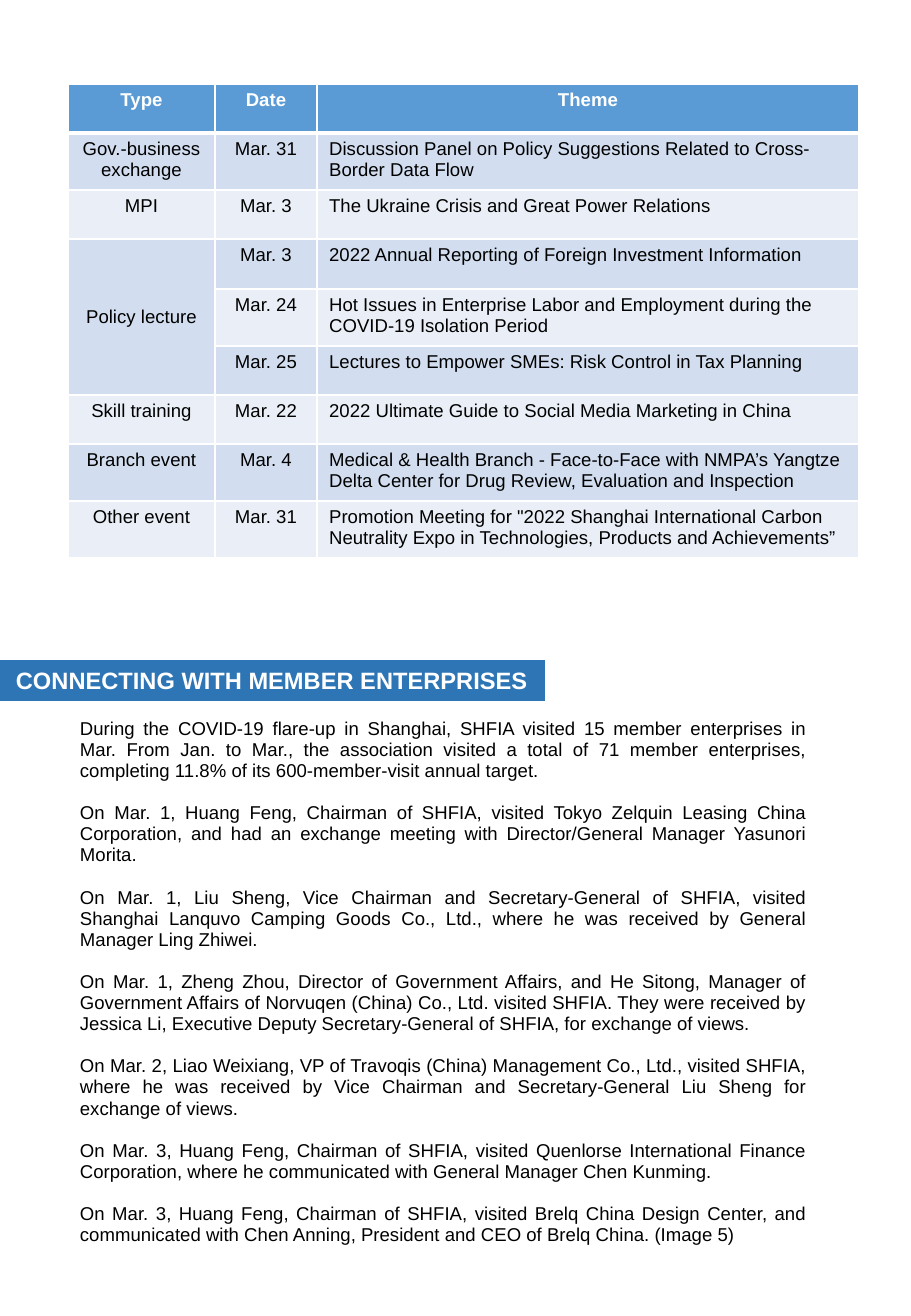
"""Build the page with the monthly event table and the member visit report."""
import pptx
import pptx.dml.color
import pptx.enum.shapes
import pptx.enum.text
import pptx.oxml
import pptx.oxml.ns
import pptx.util

PIXEL = 914400 / 121.5
ALIGN = pptx.enum.text.PP_ALIGN
ANCHOR = pptx.enum.text.MSO_ANCHOR


class Theme:
    white = "FFFFFF"
    black = "000000"
    header = "5B9BD5"
    bands = ("EAEFF7", "D2DEEF")
    banner = "2E75B6"
    body_font = {"name": "Arial", "size": pptx.util.Pt(11), "bold": False}
    header_font = {"name": "Arial", "size": pptx.util.Pt(11), "bold": True}
    banner_font = {"name": "Arial", "size": pptx.util.Pt(14), "bold": True}
    report_paragraph = {
        "alignment": ALIGN.JUSTIFY,
        "line_spacing": pptx.util.Pt(12.5),
        "space_after": pptx.util.Pt(12.5),
    }
    thin_border = 1
    thick_border = 3


COLUMN_WIDTHS = (147, 102, 542)
ROW_HEIGHTS = (49, 57, 49, 50, 57, 49, 49, 57, 57)
COLUMN_ALIGNMENTS = (ALIGN.CENTER, ALIGN.CENTER, ALIGN.LEFT)
POLICY_ROWS = (3, 5)
EVENTS = (
    ("Type", "Date", "Theme"),
    ("Gov.-business exchange", "Mar. 31",
     "Discussion Panel on Policy Suggestions Related to Cross-Border Data Flow"),
    ("MPI", "Mar. 3", "The Ukraine Crisis and Great Power Relations"),
    ("Policy lecture", "Mar. 3", "2022 Annual Reporting of Foreign Investment Information"),
    ("", "Mar. 24",
     "Hot Issues in Enterprise Labor and Employment during the COVID-19 Isolation Period"),
    ("", "Mar. 25", "Lectures to Empower SMEs: Risk Control in Tax Planning"),
    ("Skill training", "Mar. 22", "2022 Ultimate Guide to Social Media Marketing in China"),
    ("Branch event", "Mar. 4",
     "Medical & Health Branch - Face-to-Face with NMPA’s Yangtze Delta Center "
     "for Drug Review, Evaluation and Inspection"),
    ("Other event", "Mar. 31",
     'Promotion Meeting for "2022 Shanghai International Carbon Neutrality Expo '
     "in Technologies, Products and Achievements”"),
)
VISITS = (
    "During the COVID-19 flare-up in Shanghai, SHFIA visited 15 member enterprises in Mar. "
    "From Jan. to Mar., the association visited a total of 71 member enterprises, "
    "completing 11.8% of its 600-member-visit annual target.",
    "On Mar. 1, Huang Feng, Chairman of SHFIA, visited Tokyo Zelquin Leasing China "
    "Corporation, and had an exchange meeting with Director/General Manager Yasunori Morita.",
    "On Mar. 1, Liu Sheng, Vice Chairman and Secretary-General of SHFIA, visited Shanghai "
    "Lanquvo Camping Goods Co., Ltd., where he was received by General Manager Ling Zhiwei.",
    "On Mar. 1, Zheng Zhou, Director of Government Affairs, and He Sitong, Manager of "
    "Government Affairs of Norvuqen (China) Co., Ltd. visited SHFIA. They were received by "
    "Jessica Li, Executive Deputy Secretary-General of SHFIA, for exchange of views.",
    "On Mar. 2, Liao Weixiang, VP of Travoqis (China) Management Co., Ltd., visited SHFIA, "
    "where he was received by Vice Chairman and Secretary-General Liu Sheng for exchange "
    "of views.",
    "On Mar. 3, Huang Feng, Chairman of SHFIA, visited Quenlorse International Finance "
    "Corporation, where he communicated with General Manager Chen Kunming.",
    "On Mar. 3, Huang Feng, Chairman of SHFIA, visited Brelq China Design Center, and "
    "communicated with Chen Anning, President and CEO of Brelq China. (Image 5)",
)


def px(*lengths):
    return [pptx.util.Emu(round(length * PIXEL)) for length in lengths]


def color(value):
    return pptx.dml.color.RGBColor.from_string(value)


def set_values(target, values):
    for name, value in values.items():
        setattr(target, name, value)


def write_text(paragraph, text, font, font_color):
    run = paragraph.add_run()
    run.text = text
    set_values(run.font, font)
    run.font.color.rgb = color(font_color)


def set_borders(cell, top, bottom):
    widths = {"L": Theme.thin_border, "R": Theme.thin_border, "T": top, "B": bottom}
    properties = cell._tc.get_or_add_tcPr()
    for side, width in widths.items():
        properties.append(pptx.oxml.parse_xml(
            f'<a:ln{side} {pptx.oxml.ns.nsdecls("a")} w="{pptx.util.Pt(width)}">'
            f'<a:solidFill><a:srgbClr val="{Theme.white}"/></a:solidFill></a:ln{side}>'))


def fill_cell(cell, text, row, alignment):
    is_header = row == 0
    set_borders(
        cell,
        Theme.thick_border if row == 1 else Theme.thin_border,
        Theme.thick_border if is_header else Theme.thin_border)
    cell.fill.solid()
    cell.fill.fore_color.rgb = color(Theme.header if is_header else Theme.bands[row % 2])
    if text:
        paragraph = cell.text_frame.paragraphs[0]
        paragraph.alignment = ALIGN.CENTER if is_header else alignment
        font = Theme.header_font if is_header else Theme.body_font
        write_text(paragraph, text, font, Theme.white if is_header else Theme.black)


def add_event_table(slide, left, top):
    frame = slide.shapes.add_table(
        len(EVENTS), len(COLUMN_WIDTHS),
        *px(left, top, sum(COLUMN_WIDTHS), sum(ROW_HEIGHTS)))
    table = frame.table
    for column, width in zip(table.columns, px(*COLUMN_WIDTHS)):
        column.width = width
    for row, height in zip(table.rows, px(*ROW_HEIGHTS)):
        row.height = height
    for row, event in enumerate(EVENTS):
        for column, text in enumerate(event):
            fill_cell(table.cell(row, column), text, row, COLUMN_ALIGNMENTS[column])
    first, last = POLICY_ROWS
    policy_cell = table.cell(first, 0)
    policy_cell.merge(table.cell(last, 0))
    policy_cell.vertical_anchor = ANCHOR.MIDDLE


def add_report(slide, left, top, width, height):
    frame = slide.shapes.add_textbox(*px(left, top, width, height)).text_frame
    frame.word_wrap = True
    for index, visit in enumerate(VISITS):
        paragraph = frame.add_paragraph() if index else frame.paragraphs[0]
        set_values(paragraph, Theme.report_paragraph)
        write_text(paragraph, visit, Theme.body_font, Theme.black)


def add_banner(slide, text, left, top, width, height):
    shape = slide.shapes.add_shape(
        pptx.enum.shapes.MSO_SHAPE.RECTANGLE, *px(left, top, width, height))
    shape.shadow.inherit = False
    shape.fill.solid()
    shape.fill.fore_color.rgb = color(Theme.banner)
    shape.line.fill.background()
    set_values(shape.text_frame, {"word_wrap": False, "vertical_anchor": ANCHOR.MIDDLE})
    paragraph = shape.text_frame.paragraphs[0]
    paragraph.alignment = ALIGN.CENTER
    write_text(paragraph, text, Theme.banner_font, Theme.white)


def main():
    presentation = pptx.Presentation()
    presentation.slide_width, presentation.slide_height = px(911, 1316)
    slide = presentation.slides.add_slide(presentation.slide_layouts[6])
    add_event_table(slide, 68, 84)
    add_report(slide, 68, 712, 751, 540)
    add_banner(slide, "CONNECTING WITH MEMBER ENTERPRISES", -1, 660, 546, 41)
    presentation.save("out.pptx")


if __name__ == "__main__":
    main()
